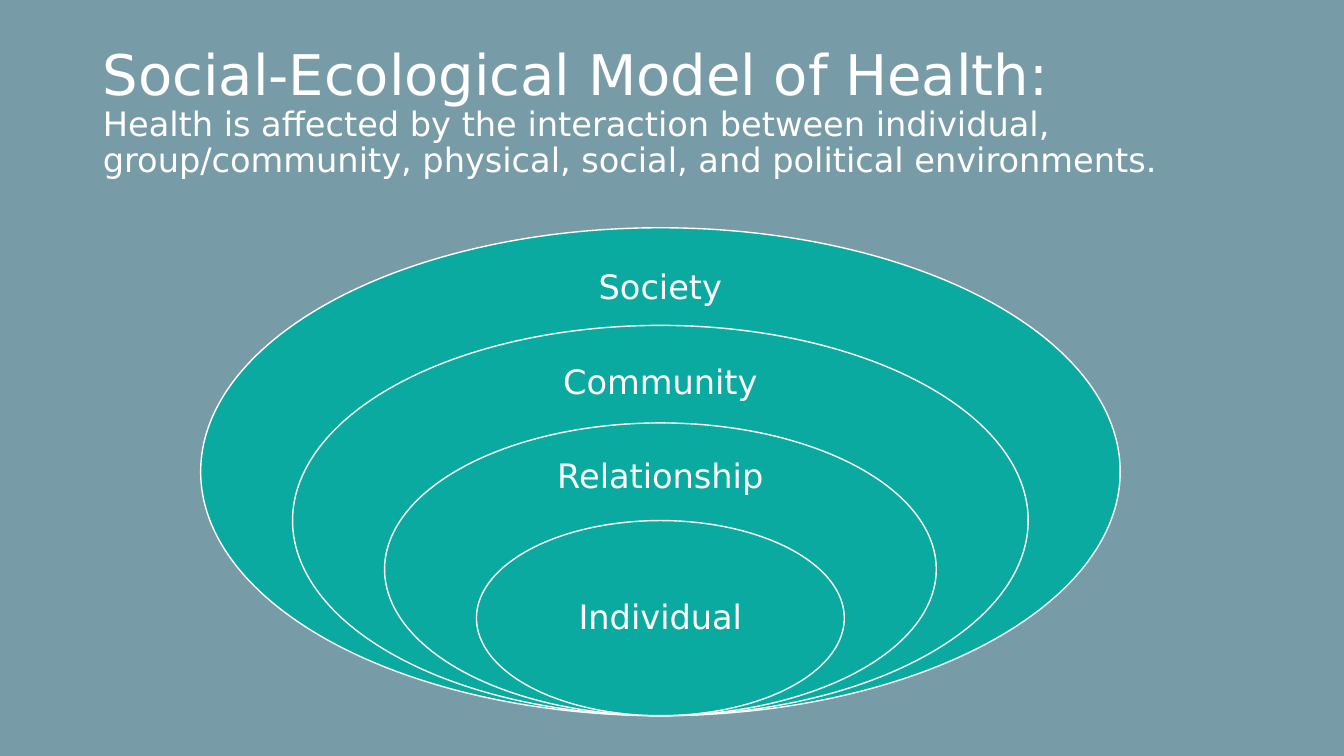
from lxml.etree import SubElement
from pptx import Presentation
from pptx.dml.color import RGBColor
from pptx.enum.shapes import MSO_SHAPE as SHAPE
from pptx.enum.text import MSO_ANCHOR as ANCHOR, MSO_AUTO_SIZE as AUTO, PP_ALIGN as ALIGN
from pptx.oxml.ns import qn
from pptx.util import Inches, Pt

BACKGROUND = RGBColor(0x78, 0x9B, 0xA8)
TEAL = RGBColor(0x0A, 0xAA, 0xA0)
WHITE = RGBColor(0xFF, 0xFF, 0xFF)
FONT = "DejaVu Sans"

HEADING = "Social-Ecological Model of Health:"
SUMMARY = ("Health is affected by the interaction between individual, "
           "group/community, physical, social, and political environments.")
LEVELS = [
    ("Society", 2.5, 0.73),
    ("Community", 3.46, 0.7),
    ("Relationship", 4.41, 0.65),
    ("Individual", 5.65, 0.97),
]
CENTER_X, BOTTOM = 6.55, 7.1
OUTER_W, OUTER_H, STEP = 9.12, 4.84, 0.2
LABEL_W = 2.56


def set_attrs(obj, values):
    for name, value in values.items():
        setattr(obj, name, value)


def add_run(p, text, size):
    r = p.add_run()
    r.text = text
    set_attrs(r.font, {"name": FONT, "size": Pt(size)})
    r.font.color.rgb = WHITE


def add_title(slide):
    sp = slide.shapes.title
    set_attrs(sp, {"left": Inches(0.92), "top": Inches(0.4),
                   "width": Inches(11.5), "height": Inches(1.45)})
    tf = sp.text_frame
    set_attrs(tf, {"word_wrap": True, "auto_size": AUTO.NONE,
                   "vertical_anchor": ANCHOR.MIDDLE})
    p = tf.paragraphs[0]
    set_attrs(p, {"alignment": ALIGN.LEFT, "line_spacing": 0.9})
    add_run(p, HEADING, 40)
    p.add_line_break()
    SubElement(p._p[-1], qn("a:rPr"), sz="4000")
    add_run(p, SUMMARY, 24)


def add_ellipse(shapes, scale):
    w, h = OUTER_W * scale, OUTER_H * scale
    sp = shapes.add_shape(SHAPE.OVAL, Inches(CENTER_X - w / 2),
                          Inches(BOTTOM - h), Inches(w), Inches(h))
    sp.shadow.inherit = False
    sp.fill.solid()
    sp.fill.fore_color.rgb = TEAL
    sp.line.color.rgb = WHITE
    sp.line.width = Pt(1)


def add_label(shapes, text, top, height):
    sp = shapes.add_textbox(Inches(CENTER_X - LABEL_W / 2), Inches(top),
                            Inches(LABEL_W), Inches(height))
    tf = sp.text_frame
    set_attrs(tf, {"word_wrap": True, "vertical_anchor": ANCHOR.MIDDLE})
    for side in ("left", "top", "right", "bottom"):
        setattr(tf, f"margin_{side}", Inches(0.19))
    p = tf.paragraphs[0]
    set_attrs(p, {"alignment": ALIGN.CENTER, "line_spacing": 0.9})
    add_run(p, text, 24)


def main():
    prs = Presentation()
    set_attrs(prs, {"slide_width": Inches(13.33), "slide_height": Inches(7.5)})
    slide = prs.slides.add_slide(prs.slide_layouts[5])
    fill = slide.background.fill
    fill.solid()
    fill.fore_color.rgb = BACKGROUND
    add_title(slide)
    model = slide.shapes.add_group_shape().shapes
    for i, (name, top, height) in enumerate(LEVELS):
        add_ellipse(model, 1 - i * STEP)
        add_label(model, name, top, height)
    prs.save("out.pptx")


if __name__ == "__main__":
    main()
